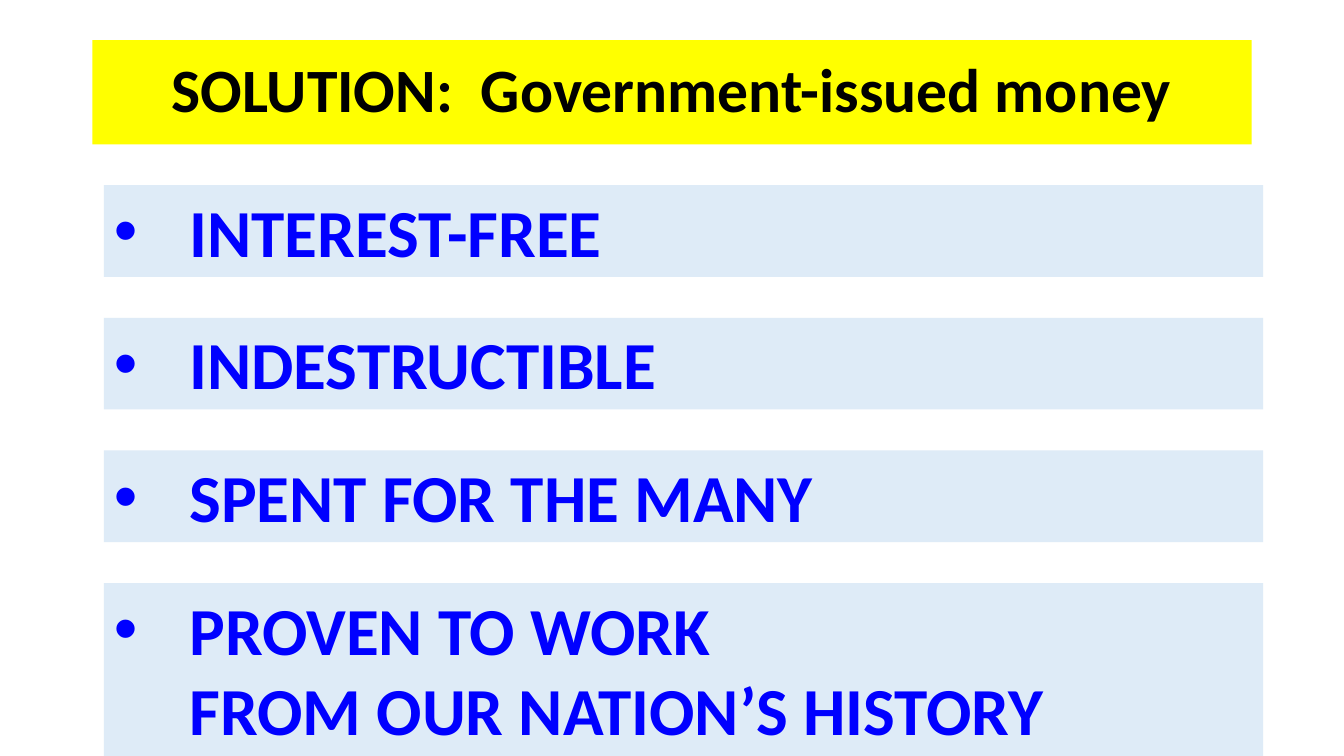
from lxml import etree
from pptx import Presentation
from pptx.dml.color import RGBColor
from pptx.enum.text import MSO_ANCHOR as Anchor, MSO_AUTO_SIZE as AutoSize, PP_ALIGN as Align
from pptx.oxml.ns import qn
from pptx.util import Pt

POINTS = [
    ["INTEREST-FREE"],
    ["INDESTRUCTIBLE"],
    ["SPENT FOR THE MANY"],
    ["PROVEN TO WORK", "FROM OUR NATION’S HISTORY"],
]
LINE_HEIGHT = 58.3
BOX_PADDING = 7.2
GAP = 29.25
INDENT = 54


def color(value):
    return RGBColor.from_string(value)


def fill_shape(shape, value):
    shape.fill.solid()
    shape.fill.fore_color.rgb = color(value)


def write_text(para, text, size, text_color, align=Align.LEFT, spacing=1.0):
    para.alignment = align
    para.line_spacing = spacing
    span = para.add_run()
    span.text = text
    font = span.font
    font.name = "Calibri"
    font.size = Pt(size)
    font.bold = True
    font.color.rgb = color(text_color)


def indent_para(para, bullet):
    """Indent a line, hanging a bullet in the indent when asked."""
    props = para._p.get_or_add_pPr()
    props.set("marL", str(Pt(INDENT)))
    props.set("indent", str(Pt(-INDENT if bullet else 0)))
    if bullet:
        etree.SubElement(props, qn("a:buFont")).set("typeface", "Arial")
        etree.SubElement(props, qn("a:buChar")).set("char", "•")
    else:
        etree.SubElement(props, qn("a:buNone"))


def add_title(page, left, top, width, height):
    title = page.shapes.title
    title.left, title.top = Pt(left), Pt(top)
    title.width, title.height = Pt(width), Pt(height)
    fill_shape(title, "FFFF00")
    frame = title.text_frame
    frame.auto_size = AutoSize.NONE
    frame.vertical_anchor = Anchor.MIDDLE
    write_text(frame.paragraphs[0], "SOLUTION:  Government-issued money",
               size=44, text_color="000000", align=Align.CENTER, spacing=0.9)


def add_point(page, lines, left, top, width, height):
    box = page.shapes.add_textbox(Pt(left), Pt(top), Pt(width), Pt(height))
    fill_shape(box, "DEEBF7")
    frame = box.text_frame
    frame.word_wrap = True
    frame.auto_size = AutoSize.SHAPE_TO_FIT_TEXT
    for index, line in enumerate(lines):
        para = frame.add_paragraph() if index else frame.paragraphs[0]
        write_text(para, line, size=48, text_color="0000FF")
        indent_para(para, bullet=index == 0)


def add_points(page, left, top, width):
    for lines in POINTS:
        height = len(lines) * LINE_HEIGHT + BOX_PADDING
        add_point(page, lines, left, top, width, height)
        top += height + GAP


def main():
    deck = Presentation()
    deck.slide_width, deck.slide_height = Pt(960), Pt(540)
    page = deck.slides.add_slide(deck.slide_layouts.get_by_name("Title Only"))
    add_title(page, left=66, top=28.75, width=828, height=74.4)
    add_points(page, left=74.2, top=132.25, width=828)
    deck.save("out.pptx")


if __name__ == "__main__":
    main()
